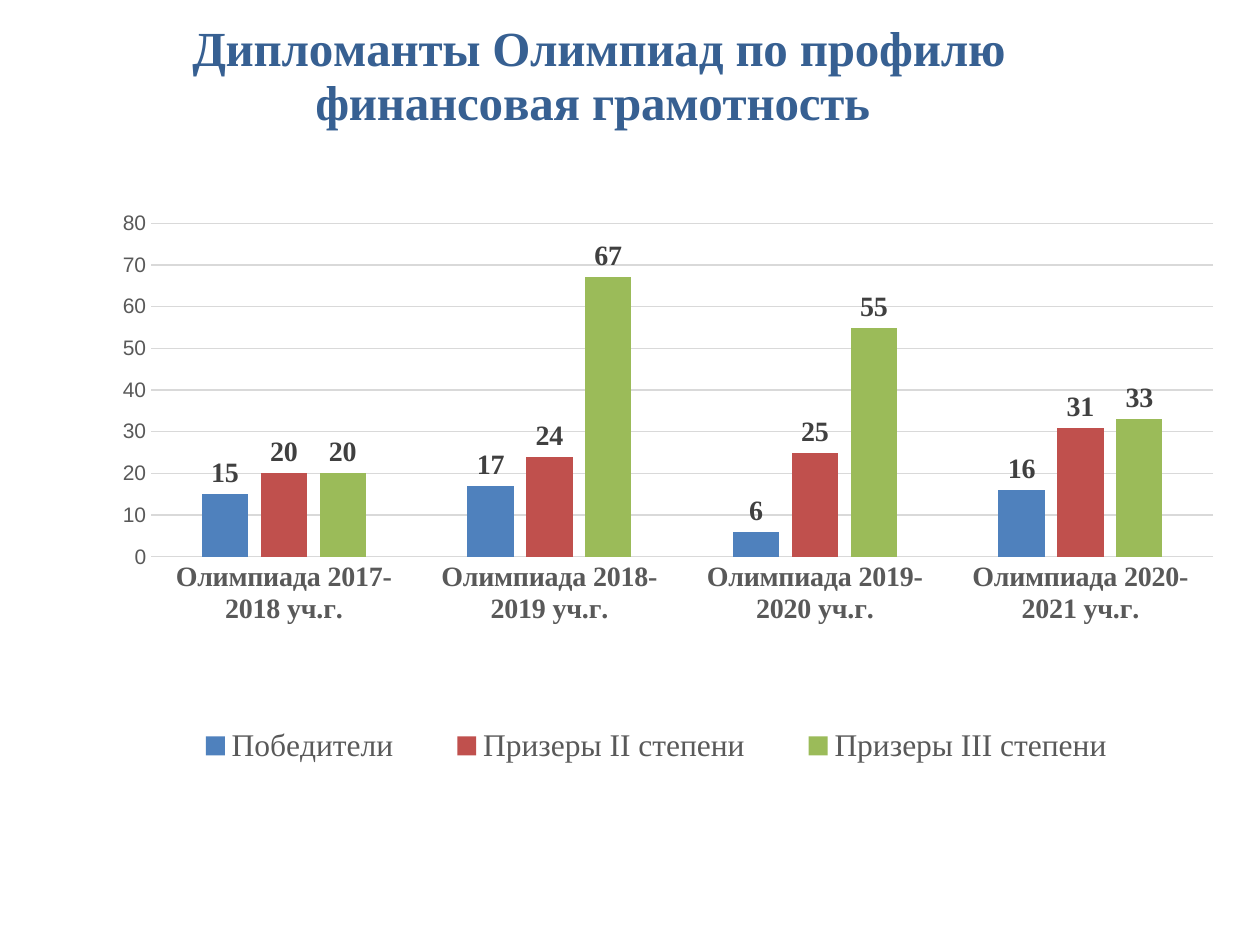
"""Build a slide charting olympiad diploma winners by school year."""
from dataclasses import dataclass

from pptx import Presentation
from pptx import util as u
from pptx.chart.chart import Chart
from pptx.chart.data import CategoryChartData
from pptx.dml.color import RGBColor
from pptx.enum import chart as ch
from pptx.oxml import parse_xml
from pptx.oxml.ns import nsdecls, qn

BLUE = RGBColor(0x4F, 0x81, 0xBD)
RED = RGBColor(0xC0, 0x50, 0x4D)
GREEN = RGBColor(0x9B, 0xBB, 0x59)
NAVY = RGBColor(0x37, 0x60, 0x92)
BLACK = RGBColor(0x00, 0x00, 0x00)
DARK_GRAY = RGBColor(0x40, 0x40, 0x40)
GRAY = RGBColor(0x59, 0x59, 0x59)
LIGHT_GRAY = RGBColor(0xD9, 0xD9, 0xD9)
SERIF = "Times New Roman"
SANS = "Arial"
HEADING = " Дипломанты Олимпиад по профилю финансовая грамотность"
FIRST_YEARS = range(2017, 2021)


@dataclass(frozen=True)
class Award:
    name: str
    counts: tuple[int, ...]
    color: RGBColor


AWARDS = (
    Award("Победители", (15, 17, 6, 16), BLUE),
    Award("Призеры II степени", (20, 24, 25, 31), RED),
    Award("Призеры III степени", (20, 67, 55, 33), GREEN),
)


def style_font(font, size: int, color: RGBColor, name: str = SERIF, bold: bool = False) -> None:
    for key, value in {"size": u.Pt(size), "name": name, "bold": bold}.items():
        setattr(font, key, value)
    font.color.rgb = color


def style_line(line) -> None:
    line.color.rgb = LIGHT_GRAY
    line.width = u.Pt(0.75)


def place(part, index: int, target: str = "", **fractions: float) -> None:
    for old in part.findall(qn("c:layout")):
        part.remove(old)
    inner = f'<c:layoutTarget val="{target}"/>' if target else ""
    modes = "".join(f'<c:{key}Mode val="edge"/>' for key in "xy")
    sizes = "".join(f'<c:{key} val="{value}"/>' for key, value in fractions.items())
    part.insert(index, parse_xml(
        f'<c:layout {nsdecls("c")}><c:manualLayout>{inner}{modes}{sizes}'
        "</c:manualLayout></c:layout>"))


def add_heading(chart: Chart) -> None:
    chart.has_title = True
    run = chart.chart_title.text_frame.paragraphs[0].add_run()
    run.text = HEADING
    style_font(run.font, 28, NAVY, bold=True)


def format_axes(chart: Chart) -> None:
    years, counts = chart.category_axis, chart.value_axis
    for axis in (years, counts):
        axis.major_tick_mark = axis.minor_tick_mark = ch.XL_TICK_MARK.NONE
    style_font(years.tick_labels.font, 16, GRAY, bold=True)
    style_font(counts.tick_labels.font, 12, GRAY, SANS)
    style_line(years.format.line)
    counts.format.line.fill.background()
    style_line(counts.major_gridlines.format.line)
    scale = {"minimum_scale": 0, "maximum_scale": 80, "major_unit": 10}
    for key, value in scale.items():
        setattr(counts, key, value)


def format_columns(chart: Chart) -> None:
    plot = chart.plots[0]
    for key, value in {"gap_width": 219, "overlap": -27, "vary_by_categories": False}.items():
        setattr(plot, key, value)
    for series, award in zip(plot.series, AWARDS):
        series.format.fill.solid()
        series.format.fill.fore_color.rgb = award.color
        labels = series.data_labels
        labels.show_value = True
        labels.position = ch.XL_LABEL_POSITION.OUTSIDE_END
        style_font(labels.font, 16, DARK_GRAY, bold=True)


def add_legend(chart: Chart) -> None:
    chart.has_legend = True
    chart.legend.position = ch.XL_LEGEND_POSITION.BOTTOM
    chart.legend.include_in_layout = False
    style_font(chart.legend.font, 18, GRAY)


def main() -> None:
    prs = Presentation()
    prs.slide_width, prs.slide_height = u.Inches(10), u.Inches(7.5)
    slide = prs.slides.add_slide(prs.slide_layouts[6])

    data = CategoryChartData()
    data.categories = [f"Олимпиада {year}-{year + 1} уч.г." for year in FIRST_YEARS]
    for award in AWARDS:
        data.add_series(award.name, award.counts)
    chart = slide.shapes.add_chart(
        ch.XL_CHART_TYPE.COLUMN_CLUSTERED, u.Inches(0.06), u.Inches(-0.98),
        u.Inches(10), u.Inches(7.5), data).chart

    style_font(chart.font, 10, BLACK, SANS)
    add_heading(chart)
    format_axes(chart)
    format_columns(chart)
    add_legend(chart)

    root = chart._chartSpace.find(qn("c:chart"))
    place(root.find(qn("c:title")), 1, x=0.13, y=0.14)
    place(root.find(qn("c:plotArea")), 0, "inner", x=0.114, y=0.367, w=0.843, h=0.353)
    place(root.find(qn("c:legend")), 1, x=0.115, y=0.88, w=0.8, h=0.08)
    prs.save("out.pptx")


if __name__ == "__main__":
    main()
